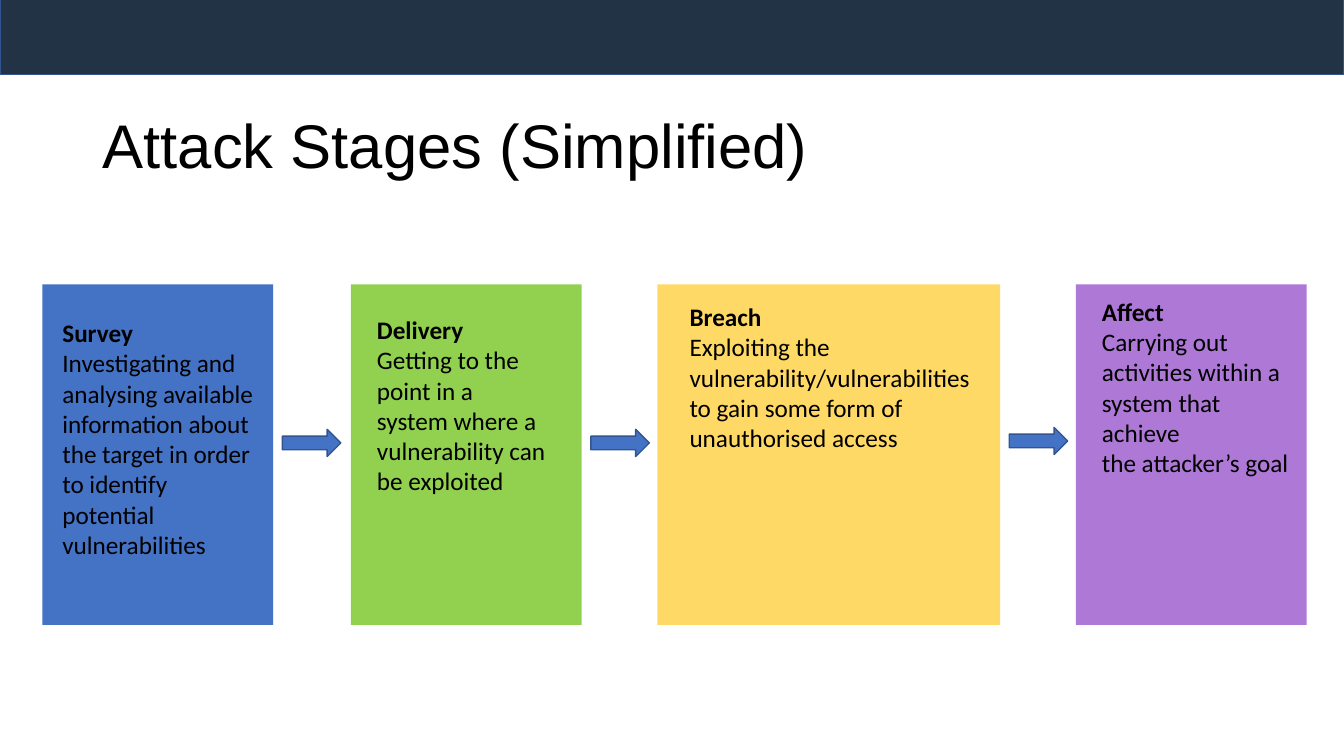
"""Build the attack stages slide."""
from pptx import Presentation
from pptx.dml.color import RGBColor
from pptx.enum.shapes import MSO_SHAPE
from pptx.enum.text import MSO_ANCHOR, MSO_AUTO_SIZE
from pptx.util import Inches, Pt

BLACK = RGBColor(0x00, 0x00, 0x00)
NAVY = RGBColor(0x22, 0x33, 0x46)
BLUE = RGBColor(0x44, 0x72, 0xC4)
OUTLINE = RGBColor(0x32, 0x54, 0x91)
GREEN = RGBColor(0x92, 0xD0, 0x50)
YELLOW = RGBColor(0xFF, 0xD9, 0x66)
PURPLE = RGBColor(0xAE, 0x78, 0xD6)

TITLE = "Attack Stages (Simplified)"
# Each stage: card left, width, colour; text box; paragraphs
STAGES = [
    (0.42, 2.29, BLUE, (0.52, 3.1, 2.12, 2.52),
     ["Survey",
      "Investigating and analysing available information about the target "
      "in order to identify potential vulnerabilities"]),
    (3.48, 2.29, GREEN, (3.64, 3.07, 1.89, 1.92),
     ["Delivery", "Getting to the point in a system where a",
      "vulnerability can be exploited"]),
    (6.52, 3.4, YELLOW, (6.74, 2.94, 3.09, 1.62),
     ["Breach",
      "Exploiting the vulnerability/vulnerabilities to gain some form of "
      "unauthorised access"]),
    (10.67, 2.29, PURPLE, (10.83, 2.89, 2.08, 1.92),
     ["Affect", "Carrying out activities within a system that achieve",
      "the attacker’s goal"]),
]
CARD_TOP, CARD_HEIGHT = 2.82, 3.38
ARROW_TOPS = [4.26, 4.26, 4.24]
ARROW_GAP, ARROW_WIDTH, ARROW_HEIGHT = 0.09, 0.58, 0.27


def add_block(s, kind, box, fill, line=None):
    sp = s.shapes.add_shape(kind, *map(Inches, box))
    sp.shadow.inherit = False
    sp.fill.solid()
    sp.fill.fore_color.rgb = fill
    if line is None:
        sp.line.fill.background()
    else:
        sp.line.color.rgb = line
        sp.line.width = Pt(1)


def add_text(s, box, lines, font, size, bold_first=False):
    tf = s.shapes.add_textbox(*map(Inches, box)).text_frame
    tf.word_wrap = True
    for i, line in enumerate(lines):
        p = tf.paragraphs[0] if i == 0 else tf.add_paragraph()
        p.text = line
        p.font.name = font
        p.font.size = Pt(size)
        p.font.color.rgb = BLACK
        p.font.bold = bold_first and i == 0
    return tf


def main():
    prs = Presentation()
    prs.slide_width, prs.slide_height = Inches(13.33), Inches(7.5)
    s = prs.slides.add_slide(prs.slide_layouts[6])

    add_block(s, MSO_SHAPE.RECTANGLE, (0, -0.04, 13.33, 0.78), NAVY, OUTLINE)
    tf = add_text(s, (0.92, 0.75, 11.5, 1.45), [TITLE], "Arial", 44)
    tf.vertical_anchor = MSO_ANCHOR.MIDDLE
    tf.paragraphs[0].line_spacing = 0.9

    for left, width, colour, text_box, lines in STAGES:
        add_block(s, MSO_SHAPE.RECTANGLE,
                  (left, CARD_TOP, width, CARD_HEIGHT), colour)
        tf = add_text(s, text_box, lines, "Calibri", 18, bold_first=True)
        tf.auto_size = MSO_AUTO_SIZE.SHAPE_TO_FIT_TEXT

    for (left, width, *_), top in zip(STAGES, ARROW_TOPS):
        add_block(s, MSO_SHAPE.RIGHT_ARROW,
                  (left + width + ARROW_GAP, top, ARROW_WIDTH, ARROW_HEIGHT),
                  BLUE, OUTLINE)

    prs.save("out.pptx")


if __name__ == "__main__":
    main()
